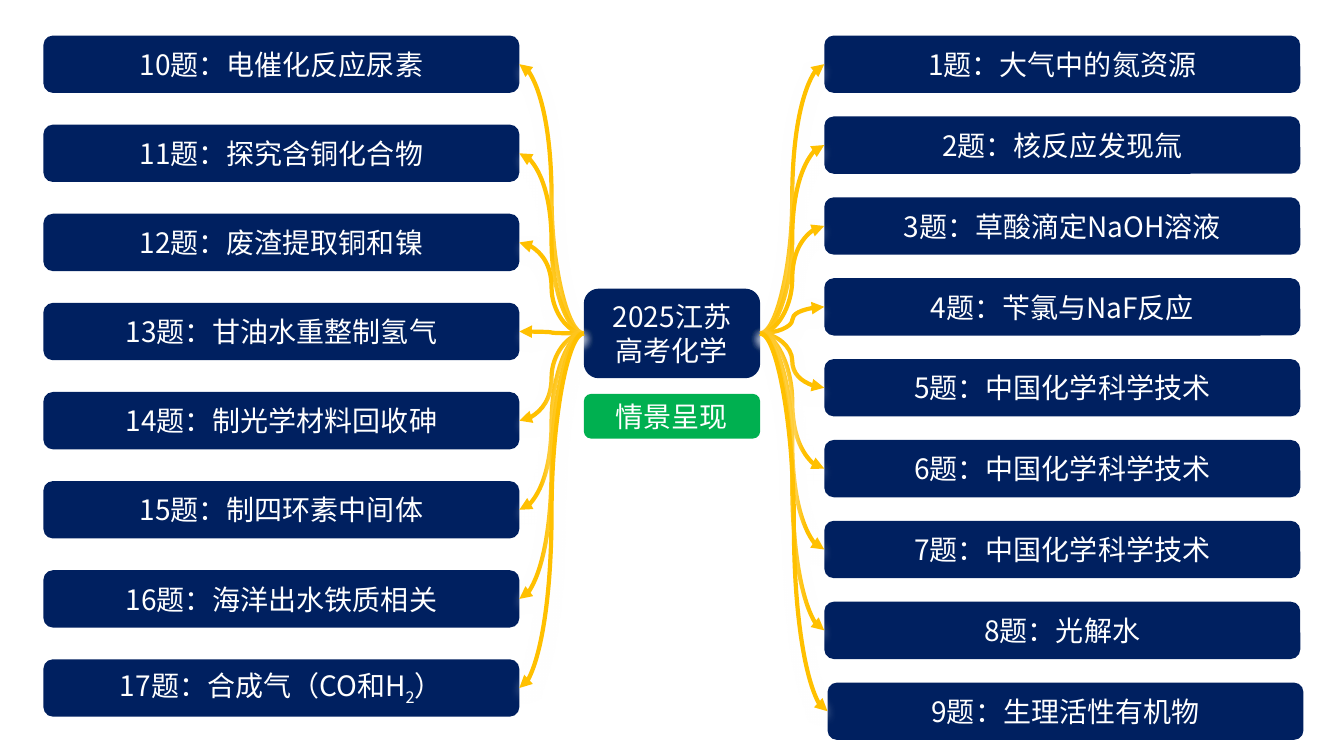
"""Mind map of the question settings in the 2025 Jiangsu chemistry paper."""
from lxml import etree
from pptx import Presentation
from pptx.dml.color import RGBColor
from pptx.enum import shapes, text
from pptx.oxml import ns
from pptx.util import Pt

NAVY = RGBColor(0x00, 0x20, 0x60)
GREEN = RGBColor(0x00, 0xB0, 0x50)
GOLD = RGBColor(0xFF, 0xC0, 0x00)
WHITE = RGBColor(0xFF, 0xFF, 0xFF)
FACE = "Noto Sans CJK SC"

HUB = ["2025江苏", "高考化学"]
TAG = ["情景呈现"]
LEFT = [
    "10题：电催化反应尿素",
    "11题：探究含铜化合物",
    "12题：废渣提取铜和镍",
    "13题：甘油水重整制氢气",
    "14题：制光学材料回收砷",
    "15题：制四环素中间体",
    "16题：海洋出水铁质相关",
    "17题：合成气（CO和H_2_）",
]
RIGHT = [
    "1题：大气中的氮资源",
    "2题：核反应发现氚",
    "3题：草酸滴定NaOH溶液",
    "4题：苄氯与NaF反应",
    "5题：中国化学科学技术",
    "6题：中国化学科学技术",
    "7题：中国化学科学技术",
    "8题：光解水",
    "9题：生理活性有机物",
]
TOP, WIDE, HIGH = 25.4, 340, 41
SIDES = [
    {"items": LEFT, "x": 31, "step": 63.65, "start": 1, "end": 3, "shift": 0},
    {"items": RIGHT, "x": 588.8, "step": 57.77, "start": 3, "end": 1, "shift": 2.3},
]
FONT = {"size": Pt(20), "name": FACE}
GLOW = {"blurRad": Pt(8), "dist": Pt(4), "dir": 5400000, "rotWithShape": 0}


def add_node(tree, lines, box, fill):
    """Add a rounded box; text between underscores is subscript."""
    node = tree.add_shape(
        shapes.MSO_SHAPE.ROUNDED_RECTANGLE, *[Pt(n) for n in box])
    node.shadow.inherit = False
    node.fill.solid()
    node.fill.fore_color.rgb = fill
    node.line.fill.background()
    frame = node.text_frame
    frame.word_wrap = True
    frame.vertical_anchor = text.MSO_ANCHOR.MIDDLE
    for row, line in enumerate(lines):
        para = frame.add_paragraph() if row else frame.paragraphs[0]
        para.alignment = text.PP_ALIGN.CENTER
        for part, words in enumerate(line.split("_")):
            run = para.add_run()
            run.text = words
            for key, value in FONT.items():
                setattr(run.font, key, value)
            run.font.color.rgb = WHITE
            props = run.font._element
            etree.SubElement(props, ns.qn("a:ea"), typeface=FACE)
            if part % 2:
                props.set("baseline", "-25000")
    return node


def add_link(tree, hub, node, start, end):
    """Join the hub to a node with a curved arrow."""
    link = tree.add_connector(shapes.MSO_CONNECTOR.CURVE, 0, 0, 0, 0)
    link.begin_connect(hub, start)
    link.end_connect(node, end)
    link.line.color.rgb = GOLD
    link.line.width = Pt(3)
    etree.SubElement(link.line._get_or_add_ln(), ns.qn("a:tailEnd"), type="triangle")
    effects = etree.SubElement(link._element.spPr, ns.qn("a:effectLst"))
    glow = etree.SubElement(effects, ns.qn("a:outerShdw"))
    for key, value in GLOW.items():
        glow.set(key, str(value))
    tint = etree.SubElement(glow, ns.qn("a:srgbClr"), val=str(WHITE))
    etree.SubElement(tint, ns.qn("a:alpha"), val="60000")


def main():
    """Build and save the slide."""
    deck = Presentation()
    deck.slide_width, deck.slide_height = Pt(960), Pt(540)
    tree = deck.slides.add_slide(deck.slide_layouts[6]).shapes
    hub = add_node(tree, HUB, (417, 206.2, 126, 64), NAVY)
    add_node(tree, TAG, (417, 281.3, 126, 32), GREEN)
    for side in SIDES:
        last = len(side["items"]) - 1
        nodes = []
        for i, item in enumerate(side["items"]):
            x = side["x"] + (side["shift"] if i == last else 0)
            box = (x, TOP + i * side["step"], WIDE, HIGH)
            nodes.append(add_node(tree, [item], box, NAVY))
        for node in nodes:
            add_link(tree, hub, node, side["start"], side["end"])
    deck.save("out.pptx")


if __name__ == "__main__":
    main()
